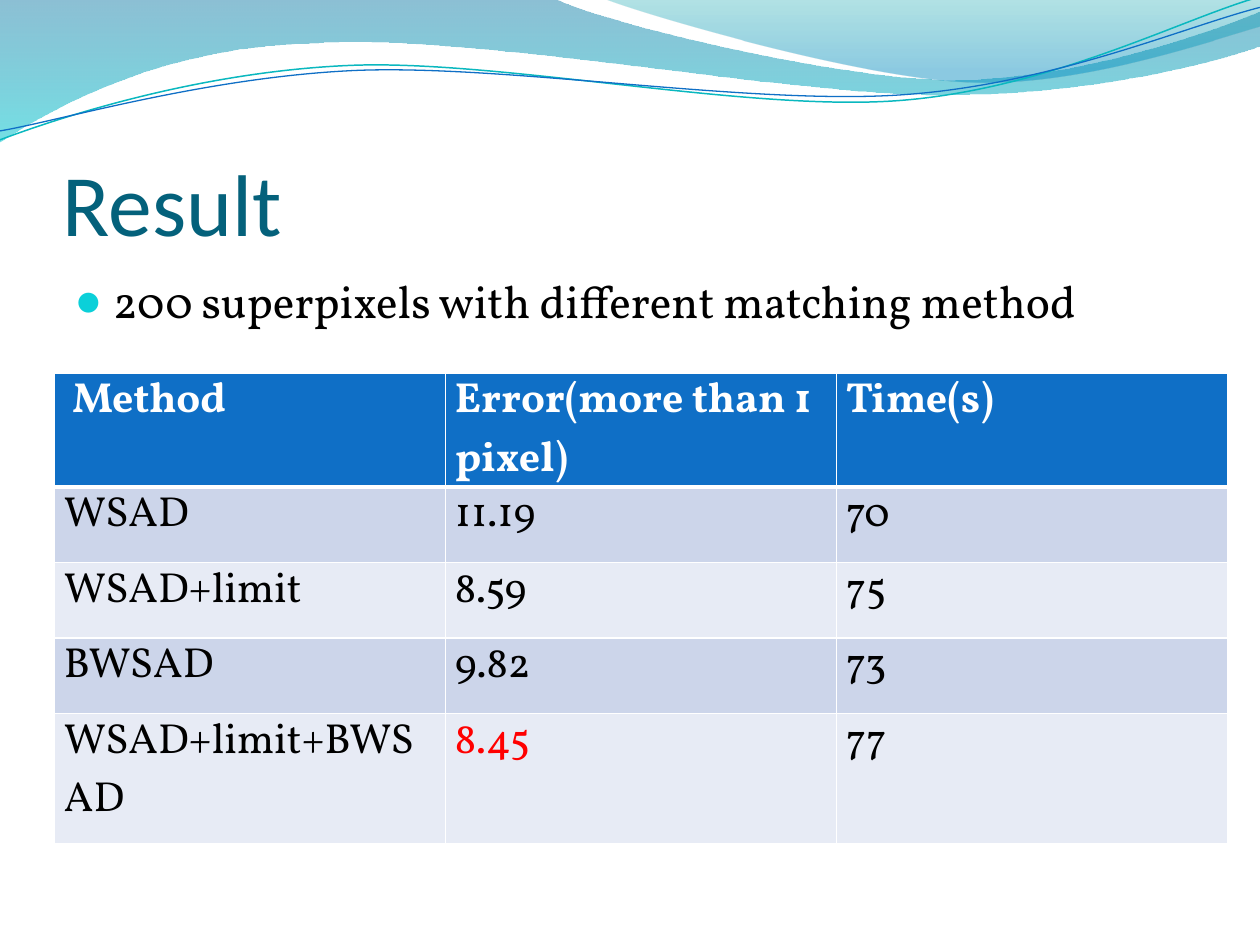
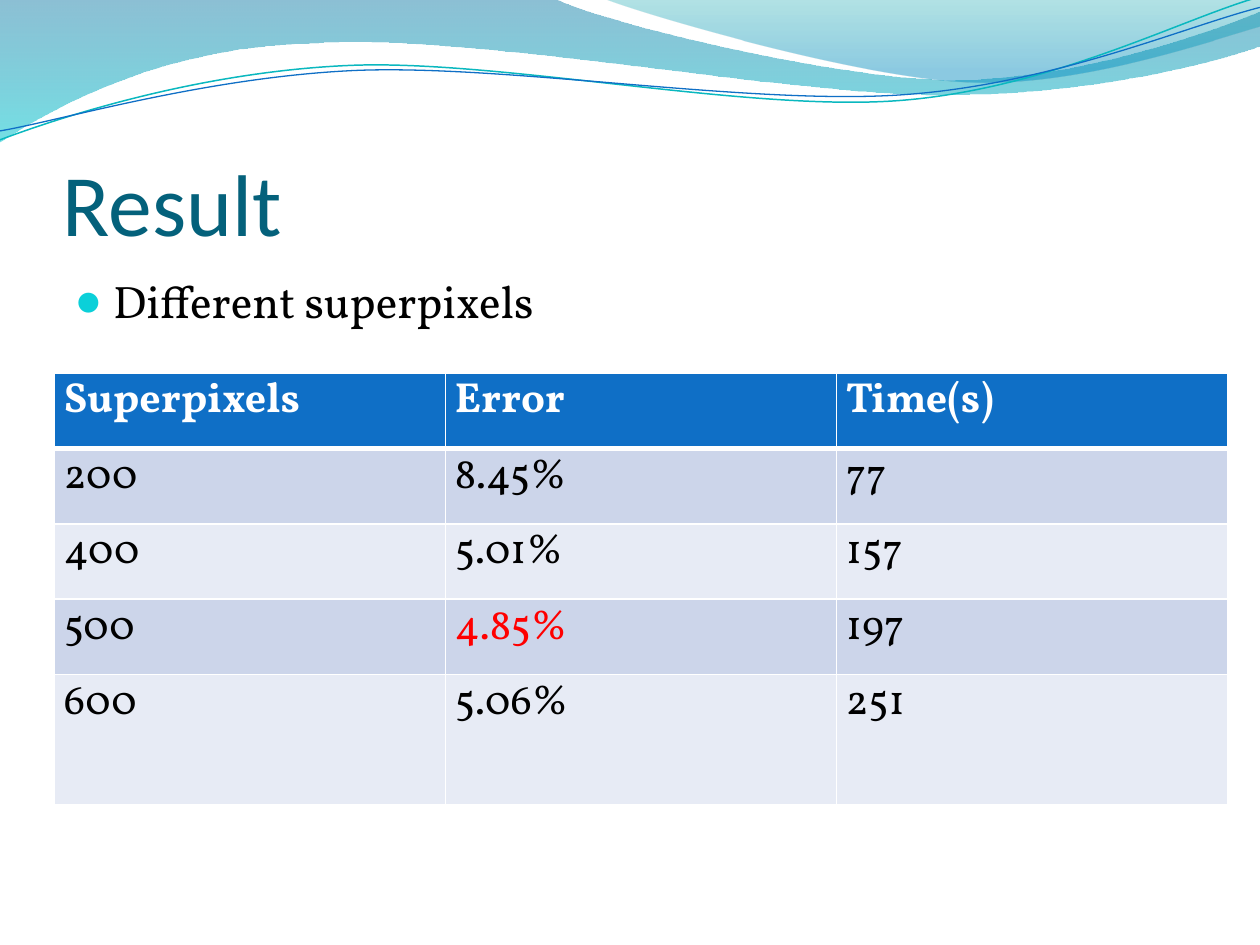
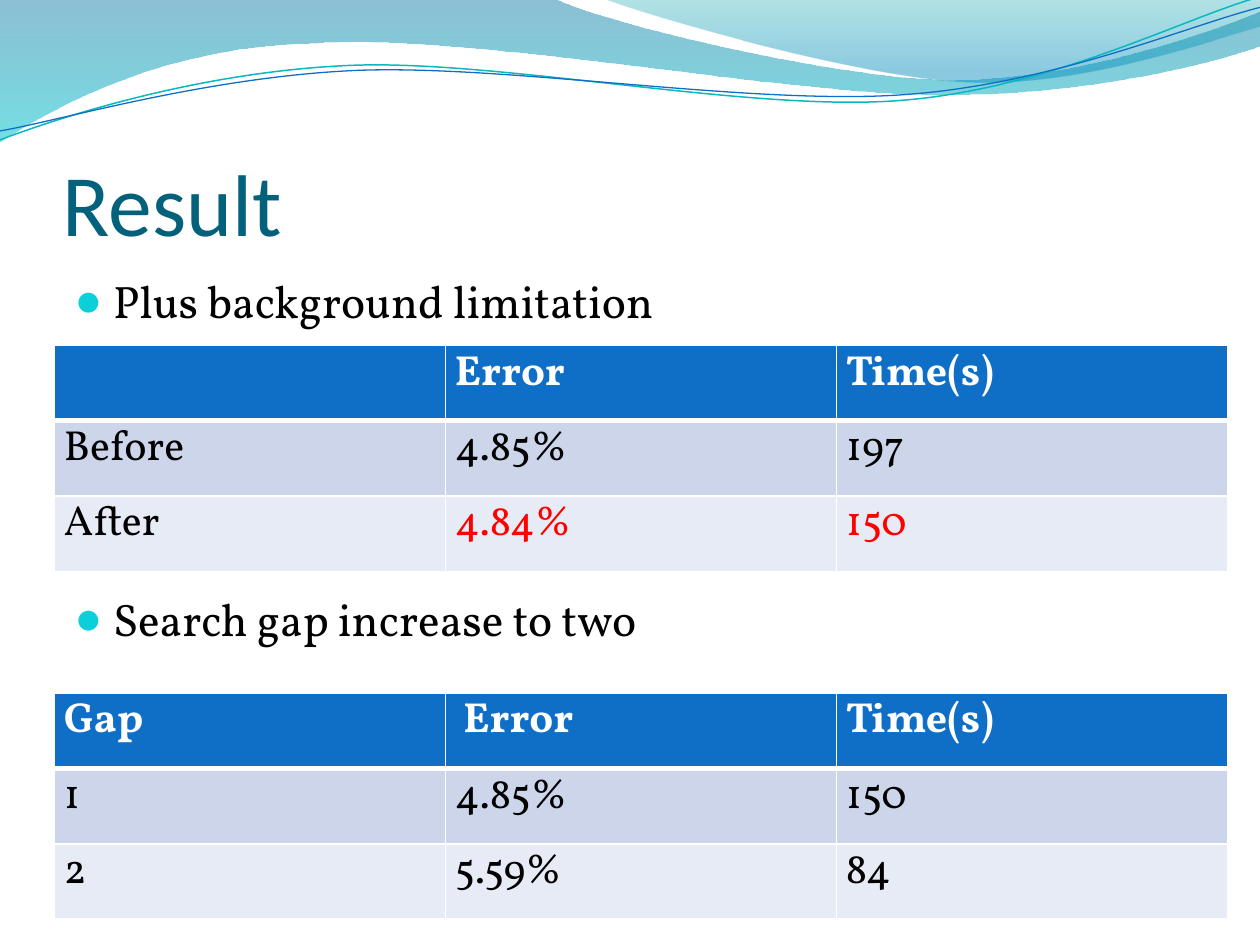
from dataclasses import dataclass

from lxml.etree import SubElement
from pptx import Presentation
from pptx.dml.color import RGBColor as Rgb
from pptx.enum.text import MSO_ANCHOR as Anchor
from pptx.oxml import parse_xml
from pptx.oxml.ns import nsdecls, qn
from pptx.util import Cm, Pt


@dataclass(frozen=True)
class Theme:
    title: str = "04617B"
    text: str = "000000"
    bullet: str = "0BD0D9"
    header: str = "0F6FC6"
    light: str = "FFFFFF"
    bands: tuple = ("CCD5EA", "E7EBF5")
    highlight: str = "FF0000"
    title_font: str = "Calibri"
    body_font: str = "Vollkorn"
    title_size: float = 50
    body_size: float = 26
    table_size: float = 24
    body_gap: float = 5.2


THEME = Theme()
COLUMN_WIDTH = 7.88
ROW_HEIGHT = 1.52
TWO_LINE_HEADER = 2.3
TALL_ROW = 2.62

FILLED_WAVES = [
    ((0, 0),
     [[(11.18, -0.03)],
      [(12.09, 0.43), (16.87, 1.6), (19.25, 1.6)],
      [(21.67, 1.6), (24.33, 0.66), (25.4, 0.23)],
      [(25.43, 0.91)],
      [(24.97, 1.12), (22.1, 1.93), (18.95, 1.91)],
      [(15.8, 1.91), (9.7, 0.71), (6.53, 0.86)],
      [(3.28, 0.91), (1.17, 2.11), (-0.03, 2.87)],
      [(0, 0)]],
     [(0, "0074A1", 45), (1, "00C6CF", 55)]),
    ((12.17, -0.03),
     [[(12.93, 0.28), (17.32, 1.57), (19.53, 1.65)],
      [(21.74, 1.75), (24.41, 0.81), (25.4, 0.53)],
      [(25.4, 0)],
      [(12.17, -0.03)]],
     [(0, "00A1A9", 30), (0.8, "008BBF", 45)]),
]

LINE_WAVES = [
    ((0, 2.82),
     [[(1.22, 2.36), (4.01, 1.45), (7.04, 1.32)],
      [(10.03, 1.19), (15.06, 2.26), (18.11, 2.03)],
      [(21.16, 1.8), (23.83, 0.38), (25.35, -0.05)]],
     "0AB8BF", 0.85),
    ((0, 2.64),
     [[(1.19, 2.44), (4.17, 1.55), (7.19, 1.42)],
      [(10.24, 1.3), (15.16, 2.13), (18.21, 1.91)],
      [(21.23, 1.7), (23.9, 0.53), (25.4, 0.15)]],
     "0F6FC6", 0.75),
]

PAGES = [
    {"bullets": [("200 superpixels with different matching method", THEME.body_gap)],
     "tables": [
         {"top": 7.52, "first_row": TWO_LINE_HEADER, "last_row": TALL_ROW,
          "red": {"8.45"}, "rows": [
             (" Method", "Error(more than 1 pixel)", "Time(s)"),
             ("WSAD", "11.19", "70"),
             ("WSAD+limit", "8.59", "75"),
             ("BWSAD", "9.82", "73"),
             ("WSAD+limit+BWSAD", "8.45", "77")]}]},
    {"bullets": [("Different superpixels", THEME.body_gap)],
     "tables": [
         {"top": 7.52, "first_row": ROW_HEIGHT, "last_row": TALL_ROW,
          "red": {"4.85%"}, "rows": [
             ("Superpixels", "Error", "Time(s)"),
             ("200", "8.45%", "77"),
             ("400", "5.01%", "157"),
             ("500", "4.85%", "197"),
             ("600", "5.06%", "251")]}]},
    {"bullets": [("Plus background limitation", THEME.body_gap),
                 ("Search gap increase to two", 150.6)],
     "tables": [
         {"top": 6.96, "first_row": ROW_HEIGHT, "last_row": ROW_HEIGHT,
          "red": {"4.84%", "150"}, "rows": [
             ("", "Error", "Time(s)"),
             ("Before", "4.85%", "197"),
             ("After", "4.84%", "150")]},
         {"top": 13.97, "first_row": ROW_HEIGHT, "last_row": ROW_HEIGHT,
          "red": set(), "rows": [
             ("Gap", " Error", "Time(s)"),
             ("1", "4.85%", "150"),
             ("2", "5.59%", "84")]}]},
]


def add_wave(page, start, segments, close):
    builder = page.shapes.build_freeform(Cm(start[0]), Cm(start[1]))
    builder.add_line_segments(
        [(Cm(x), Cm(y)) for segment in segments for x, y in segment], close=close)
    wave = builder.convert_to_shape()
    wave.shadow.inherit = False
    steps = iter(list(wave.element.spPr.iter(qn("a:lnTo"))))
    for segment in segments:
        first, *others = [next(steps) for corner in segment]
        if others:
            first.tag = qn("a:cubicBezTo")
            for other in others:
                first.append(other[0])
                other.getparent().remove(other)
    return wave


def style_text(para, font, size, color, bold=False):
    for span in para.runs:
        span.font.name = font
        span.font.size = Pt(size)
        span.font.bold = bold
        span.font.color.rgb = Rgb.from_string(color)


deck = Presentation()
deck.slide_width = Cm(25.4)
deck.slide_height = Cm(19.05)

for content in PAGES:
    page = deck.slides.add_slide(deck.slide_layouts[6])

    for start, segments, stops in FILLED_WAVES:
        wave = add_wave(page, start, segments, True)
        wave.line.fill.background()
        wave.fill.gradient()
        wave.fill.gradient_angle = 270
        for stop, (position, color, opacity) in zip(wave.fill.gradient_stops, stops):
            stop.position = position
            stop.color.rgb = Rgb.from_string(color)
        tints = wave.element.spPr.iter(qn("a:srgbClr"))
        for tint, (position, color, opacity) in zip(tints, stops):
            SubElement(tint, qn("a:alpha"), val=str(opacity * 1000))

    for start, segments, color, width in LINE_WAVES:
        wave = add_wave(page, start, segments, False)
        wave.fill.background()
        wave.line.color.rgb = Rgb.from_string(color)
        wave.line.width = Pt(width)

    title_box = page.shapes.add_textbox(Cm(1.27), Cm(1.95), Cm(22.86), Cm(3.18))
    title_frame = title_box.text_frame
    title_frame.word_wrap = True
    title_frame.vertical_anchor = Anchor.BOTTOM
    title_frame.margin_left = title_frame.margin_right = title_frame.margin_bottom = 0
    title_frame.text = "Result"
    style_text(title_frame.paragraphs[0], THEME.title_font, THEME.title_size, THEME.title)

    body_box = page.shapes.add_textbox(Cm(1.27), Cm(5.38), Cm(22.86), Cm(12.19))
    body_frame = body_box.text_frame
    body_frame.word_wrap = True
    body_frame.text = "\n".join(words for words, gap in content["bullets"])
    for para, (words, gap) in zip(body_frame.paragraphs, content["bullets"]):
        style_text(para, THEME.body_font, THEME.body_size, THEME.text)
        para.space_before = Pt(gap)
        props = para._p.get_or_add_pPr()
        props.set("marL", str(Cm(0.76)))
        props.set("indent", str(-Cm(0.76)))
        bullet_color = SubElement(props, qn("a:buClr"))
        SubElement(bullet_color, qn("a:srgbClr"), val=THEME.bullet)
        SubElement(props, qn("a:buSzPct"), val="95000")
        SubElement(props, qn("a:buFont"), typeface=THEME.title_font)
        SubElement(props, qn("a:buChar"), char="●")

    for data in content["tables"]:
        rows = data["rows"]
        heights = [data["first_row"], *[ROW_HEIGHT] * (len(rows) - 2), data["last_row"]]
        table = page.shapes.add_table(
            len(rows), 3, Cm(1.1), Cm(data["top"]),
            Cm(3 * COLUMN_WIDTH), Cm(sum(heights))).table
        for column in table.columns:
            column.width = Cm(COLUMN_WIDTH)
        for row_index, (row, height) in enumerate(zip(rows, heights)):
            table.rows[row_index].height = Cm(height)
            is_header = row_index == 0
            fill = THEME.header if is_header else THEME.bands[(row_index - 1) % 2]
            for column_index, words in enumerate(row):
                cell = table.cell(row_index, column_index)
                cell.margin_left = cell.margin_right = Cm(0.19)
                cell.margin_top = cell.margin_bottom = 0
                cell.fill.solid()
                cell.fill.fore_color.rgb = Rgb.from_string(fill)
                cell.text_frame.text = words
                color = THEME.light if is_header else THEME.text
                if words in data["red"]:
                    color = THEME.highlight
                style_text(cell.text_frame.paragraphs[0], THEME.body_font,
                           THEME.table_size, color, is_header)
                cell_props = cell._tc.get_or_add_tcPr()
                for place, side in enumerate("LRTB"):
                    heavy = (row_index, side) in ((0, "B"), (1, "T"))
                    cell_props.insert(place, parse_xml(
                        f'<a:ln{side} {nsdecls("a")} w="{Pt(3 if heavy else 1)}">'
                        f'<a:solidFill><a:srgbClr val="{THEME.light}"/></a:solidFill>'
                        f'</a:ln{side}>'))

deck.save("out.pptx")
